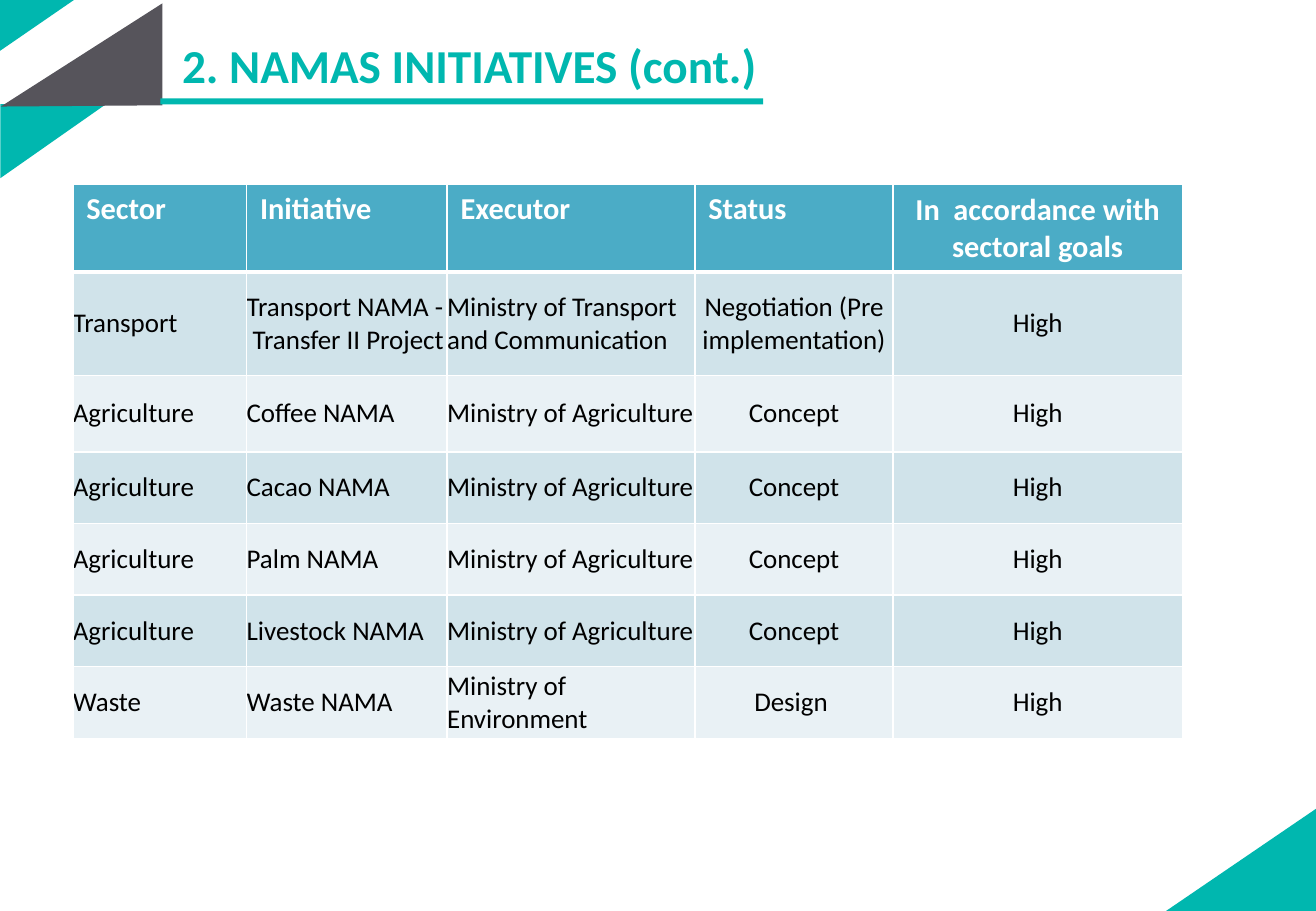
from dataclasses import dataclass
from math import cos, radians, sin

from lxml.etree import SubElement
from pptx import Presentation
from pptx.dml.color import RGBColor
from pptx.enum.shapes import MSO_SHAPE
from pptx.enum.text import MSO_ANCHOR, PP_ALIGN
from pptx.oxml.ns import qn
from pptx.util import Inches, Pt


@dataclass(frozen=True)
class Theme:
    font: str = "Calibri"
    teal: str = "00B7AF"
    gray: str = "56545B"
    header: str = "4BACC6"
    bands: tuple = ("D0E3EA", "E9F1F5")
    white: str = "FFFFFF"
    black: str = "000000"
    title_size: int = 28
    header_size: int = 18
    body_size: int = 16


theme = Theme()


def write(tf, text, size, color, bold=False, align=PP_ALIGN.LEFT):
    tf.word_wrap = True
    p = tf.paragraphs[0]
    p.alignment = align
    r = p.add_run()
    r.text = text
    r.font.name = theme.font
    r.font.size = Pt(size)
    r.font.bold = bold
    r.font.color.rgb = RGBColor.from_string(color)


def paint(sp, color):
    sp.shadow.inherit = False
    sp.fill.solid()
    sp.fill.fore_color.rgb = RGBColor.from_string(color)
    sp.line.fill.background()


prs = Presentation()
prs.slide_width, prs.slide_height = Inches(10.83), Inches(7.5)
s = prs.slides.add_slide(prs.slide_layouts[6])

# Corner triangles: colour, rotation, centre, corners as they stand on the slide
triangles = [
    (theme.teal, 310.3, (0.2, 0.12), [(0, 0.42), (0, 0), (0.61, 0)]),
    (theme.teal, 310.3, (0.29, 1.04), [(0, 1.47), (0, 0.86), (0.87, 0.86)]),
    (theme.teal, 130.6, (10.42, 7.27), [(10.84, 6.64), (10.84, 7.53), (9.55, 7.52)]),
    (theme.gray, 130.6, (0.88, 0.62), [(1.33, 0.01), (1.33, 0.85), (0, 0.86)]),
]
for color, angle, (cx, cy), corners in triangles:
    # Turn the corners back, so that the rotation brings them into place
    c, d = cos(radians(angle)), sin(radians(angle))
    start, *rest = [(Inches(cx + (x - cx) * c + (y - cy) * d),
                     Inches(cy - (x - cx) * d + (y - cy) * c)) for x, y in corners]
    outline = s.shapes.build_freeform(*start)
    outline.add_line_segments(rest, close=True)
    triangle = outline.convert_to_shape()
    triangle.rotation = angle
    paint(triangle, color)

# Title and its rule
rule = s.shapes.add_shape(MSO_SHAPE.RECTANGLE, Inches(1.32), Inches(0.81), Inches(4.96), Inches(0.05))
paint(rule, theme.teal)
title = s.shapes.add_textbox(Inches(1.4), Inches(0.25), Inches(6.3), Inches(0.57))
write(title.text_frame, "2. NAMAS INITIATIVES (cont.)", theme.title_size, theme.teal, bold=True)

# Table of initiatives
agriculture = "Ministry of Agriculture"
rows = [
    ("Sector", "Initiative", "Executor", "Status", "In  accordance with sectoral goals"),
    ("Transport", "Transport NAMA -  Transfer II Project",
     "Ministry of Transport and Communication", "Negotiation (Pre implementation)", "High"),
    ("Agriculture", "Coffee NAMA", agriculture, "Concept", "High"),
    ("Agriculture", "Cacao NAMA", agriculture, "Concept", "High"),
    ("Agriculture", "Palm NAMA", agriculture, "Concept", "High"),
    ("Agriculture", "Livestock NAMA", agriculture, "Concept", "High"),
    ("Waste", "Waste NAMA", "Ministry of Environment", "Design ", "High"),
]
col_widths = [1.43, 1.65, 2.04, 1.63, 2.38]
row_heights = [0.72, 0.85, 0.63] + [0.59] * 4

table = s.shapes.add_table(len(rows), len(col_widths), Inches(0.6), Inches(1.52),
                           Inches(sum(col_widths)), Inches(sum(row_heights))).table
table.first_row = table.horz_banding = False
for column, width in zip(table.columns, col_widths):
    column.width = Inches(width)
for row, height in zip(table.rows, row_heights):
    row.height = Inches(height)

for i, texts in enumerate(rows):
    is_header = i == 0
    for j, text in enumerate(texts):
        cell = table.cell(i, j)

        # Header labels sit top left with a margin, all other cells fill the middle
        is_label = is_header and j < 4
        cell.margin_left = cell.margin_right = Inches(0.11 if is_label else 0)
        cell.margin_top = cell.margin_bottom = Inches(0.05 if is_label else 0)
        cell.vertical_anchor = MSO_ANCHOR.TOP if is_label else MSO_ANCHOR.MIDDLE
        align = PP_ALIGN.CENTER if j >= 3 and not is_label else PP_ALIGN.LEFT
        write(cell.text_frame, text,
              theme.header_size if is_header else theme.body_size,
              theme.white if is_header else theme.black, bold=is_header, align=align)

        # White borders, thicker under the header
        for side in ("L", "R", "T", "B"):
            thick = (i, side) in ((0, "B"), (1, "T"))
            ln = SubElement(cell._tc.get_or_add_tcPr(), qn(f"a:ln{side}"), w=str(Pt(3 if thick else 1)))
            SubElement(SubElement(ln, qn("a:solidFill")), qn("a:srgbClr"), val=theme.white)

        cell.fill.solid()
        cell.fill.fore_color.rgb = RGBColor.from_string(theme.header if is_header else theme.bands[(i - 1) % 2])

prs.save("out.pptx")
